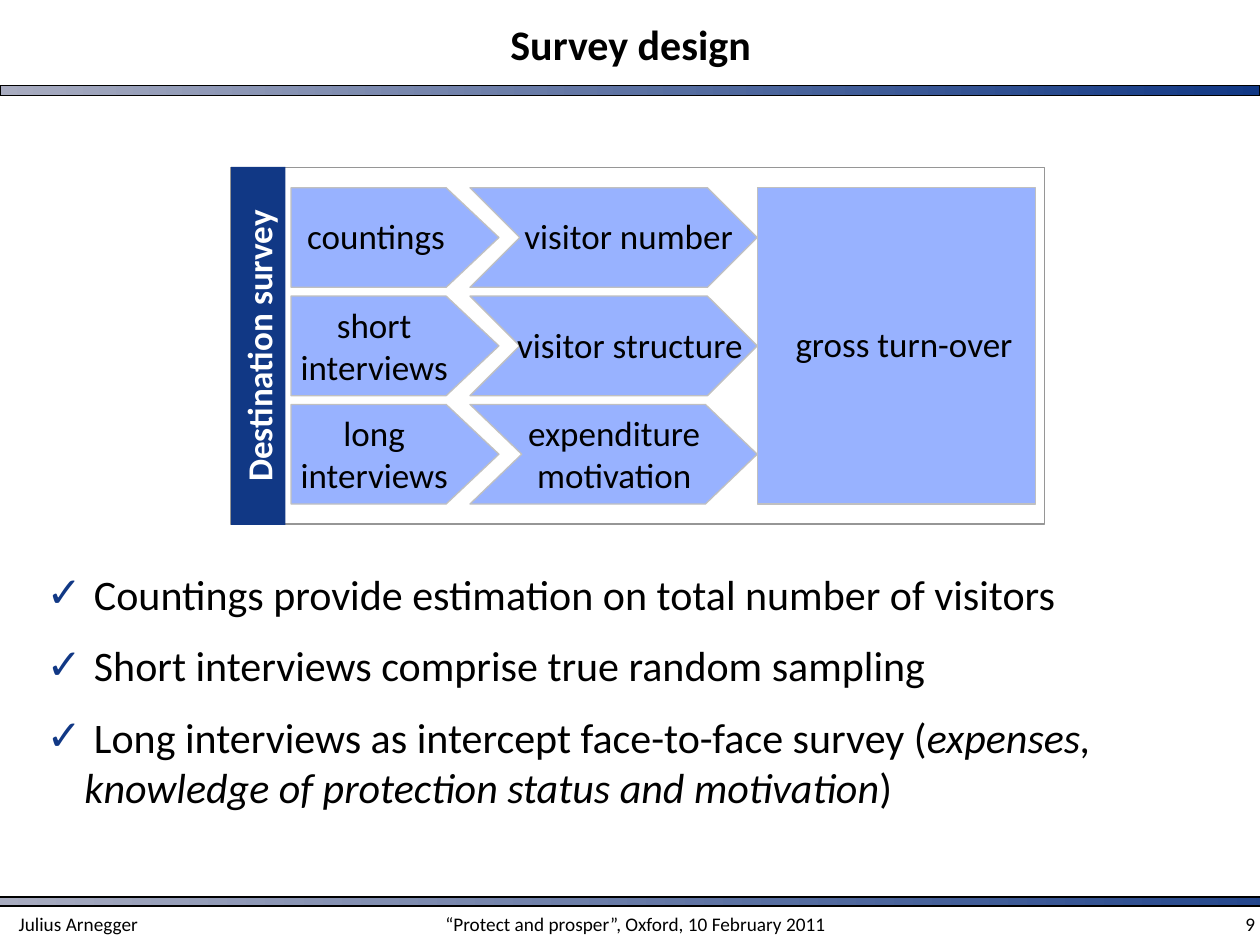
from lxml import etree
from pptx import Presentation
from pptx import util as u
from pptx.dml.color import RGBColor
from pptx.enum import shapes, text
from pptx.oxml.ns import qn

NAVY = RGBColor(0x11, 0x38, 0x85)
MIST = RGBColor(0xA8, 0xAC, 0xC0)
BLUE = RGBColor(0x33, 0x66, 0xFF)
SILVER = RGBColor(0xC0, 0xC0, 0xC0)
GRAY = RGBColor(0x96, 0x96, 0x96)
BLACK = RGBColor(0, 0, 0)
WHITE = RGBColor(0xFF, 0xFF, 0xFF)
FONT = "Calibri"
LEFT, CENTER, RIGHT = text.PP_ALIGN.LEFT, text.PP_ALIGN.CENTER, text.PP_ALIGN.RIGHT
KIND = shapes.MSO_SHAPE


class SurveySlide:
    """Draws the parts of one slide in a shared style."""

    def __init__(self, slide):
        self.slide = slide

    def format_font(self, font, size, color=BLACK, **extra):
        for key, value in {"name": FONT, "size": u.Pt(size), **extra}.items():
            setattr(font, key, value)
        font.color.rgb = color

    def place(self, item, box):
        for key, value in zip(("left", "top", "width", "height"), box):
            setattr(item, key, u.Inches(value))

    def fill_text(self, frame, wording, size, align=CENTER, color=BLACK, bold=False):
        frame.text = wording
        for line in frame.paragraphs:
            line.alignment = align
            self.format_font(line.font, size, color, bold=bold)

    def shape(self, kind, box, line=None, fill=None, alpha=None, point=None):
        item = self.slide.shapes.add_shape(kind, *map(u.Inches, box))
        item.shadow.inherit = False
        if point is not None:
            item.adjustments[0] = point
        if fill is None:
            item.fill.background()
        else:
            item.fill.solid()
            item.fill.fore_color.rgb = fill
        if alpha is not None:
            tint = item.fill._xPr.find(qn("a:solidFill"))[0]
            etree.SubElement(tint, qn("a:alpha"), val=str(alpha * 1000))
        if line is None:
            item.line.fill.background()
        else:
            item.line.color.rgb = line
            item.line.width = u.Pt(0.75)
        return item

    def step(self, kind, box, point=None):
        return self.shape(kind, box, SILVER, BLUE, 50, point)

    def bar(self, box):
        band = self.shape(KIND.RECTANGLE, box, BLACK)
        band.fill.gradient()
        band.fill.gradient_angle = 0
        for stop, color, position in zip(band.fill.gradient_stops, (MIST, NAVY), (0, 1)):
            stop.color.rgb = color
            stop.position = position

    def label(self, wording, box, size=20, align=CENTER, wrap=False):
        frame = self.slide.shapes.add_textbox(*map(u.Inches, box)).text_frame
        frame.word_wrap = wrap
        self.fill_text(frame, wording, size, align)

    def title(self, wording, box):
        heading = self.slide.shapes.title
        self.place(heading, box)
        heading.text_frame.vertical_anchor = text.MSO_ANCHOR.MIDDLE
        self.fill_text(heading.text_frame, wording, 24, bold=True)

    def checklist(self, items, box):
        body = self.slide.placeholders[1]
        self.place(body, box)
        frame = body.text_frame
        frame.auto_size = text.MSO_AUTO_SIZE.NONE
        for index, parts in enumerate(items):
            entry = frame.add_paragraph() if index else frame.paragraphs[0]
            props = entry._p.get_or_add_pPr()
            props.set("marL", str(u.Inches(0.3)))
            props.set("indent", str(u.Inches(-0.3)))
            tint = etree.SubElement(props, qn("a:buClr"))
            etree.SubElement(tint, qn("a:srgbClr"), val=str(NAVY))
            etree.SubElement(props, qn("a:buChar"), char="✓")
            entry.space_before = u.Pt(12 if index else 0)
            for wording, italic in parts:
                run = entry.add_run()
                run.text = wording
                self.format_font(run.font, 24, italic=italic)


def main():
    deck = Presentation()
    deck.slide_width, deck.slide_height = u.Inches(10), u.Inches(7.5)
    page = SurveySlide(deck.slides.add_slide(deck.slide_layouts[1]))

    page.bar((0, 0.68, 10, 0.08))
    page.bar((-0.01, 7.12, 11.49, 0.07))
    for wording, left, width, align in (
        ("Julius Arnegger", 0.05, 2.37, LEFT),
        ("“Protect and prosper”, Oxford, 10 February 2011", 3.43, 3.23, CENTER),
        ("9", 8.82, 1.24, RIGHT),
    ):
        page.label(wording, (left, 7.19, width, 0.31), 11, align, True)
    page.title("Survey design", (1.67, 0, 6.67, 0.7))

    page.shape(KIND.RECTANGLE, (1.83, 1.33, 6.46, 2.83), GRAY)
    survey = page.shape(KIND.RECTANGLE, (0.63, 2.53, 2.84, 0.43), fill=NAVY)
    survey.rotation = 270
    page.fill_text(survey.text_frame, "Destination survey", 20, color=WHITE, bold=True)

    rows = (
        ("countings", (2.33, 1.65, 1.31, 0.44),
         "visitor number", (4.02, 1.65, 1.94, 0.43), 0.5),
        ("short\ninterviews", (2.25, 2.36, 1.44, 0.77),
         "visitor structure", (3.96, 2.52, 2.08, 0.43), 0.5),
        ("long\ninterviews", (2.25, 3.22, 1.44, 0.77),
         "expenditure\nmotivation", (4.08, 3.22, 1.59, 0.77), 0.52),
    )
    for index, (method, method_box, result, result_box, point) in enumerate(rows):
        top = 1.49 + 0.86 * index
        page.step(KIND.PENTAGON, (2.31, top, 1.65, 0.79), 0.53)
        page.label(method, method_box)
        page.step(KIND.CHEVRON, (3.73, top, 2.28, 0.79), point)
        page.label(result, result_box)
    page.step(KIND.RECTANGLE, (6.01, 1.49, 2.21, 2.51))
    page.label("gross turn-over", (6.2, 2.51, 1.95, 0.44))

    page.checklist((
        ((" Countings provide estimation on total number of visitors", False),),
        ((" Short interviews comprise true random sampling", False),),
        ((" Long interviews as intercept face-to-face survey (", False),
         ("expenses, knowledge of protection status and motivation", True),
         (")", False)),
    ), (0.27, 4.46, 9.37, 2.12))
    deck.save("out.pptx")


if __name__ == "__main__":
    main()
